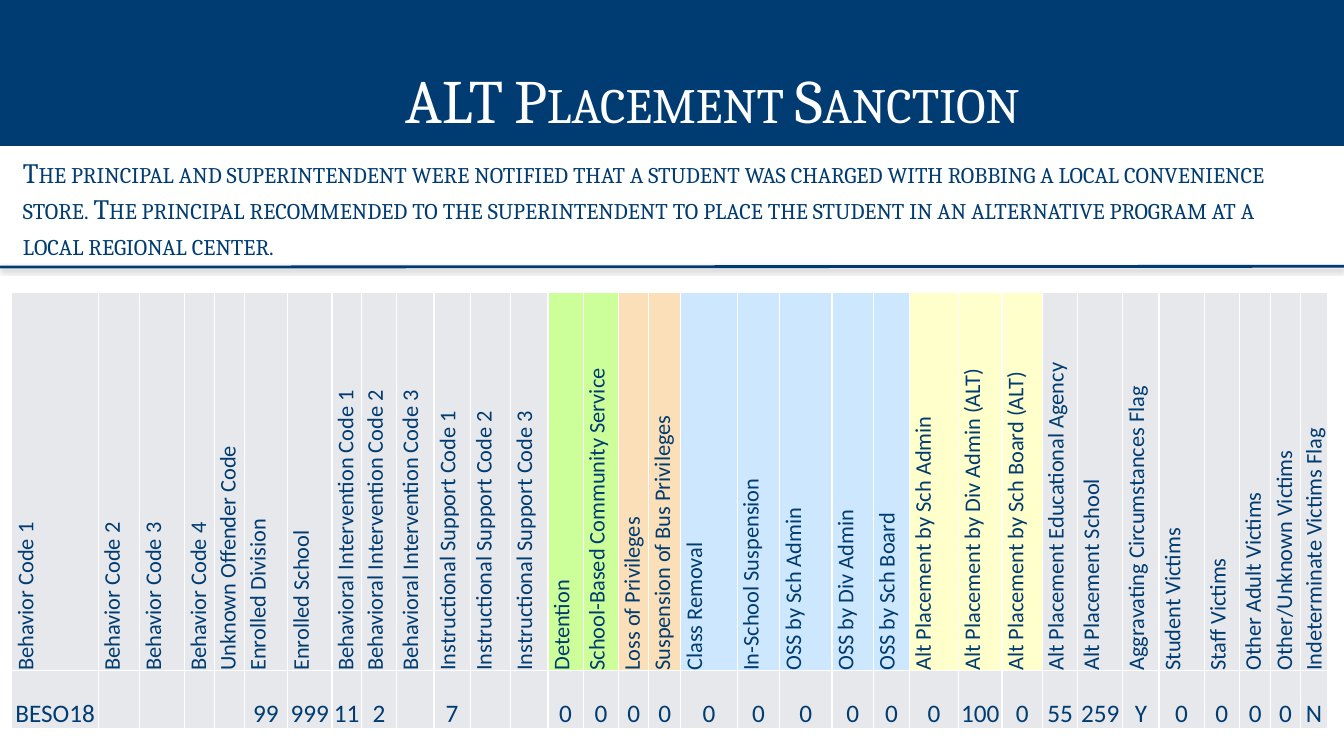
from lxml.etree import SubElement
from pptx import Presentation
from pptx.dml.color import RGBColor
from pptx.enum.shapes import MSO_CONNECTOR, MSO_SHAPE
from pptx.enum.text import MSO_ANCHOR, PP_ALIGN
from pptx.oxml import parse_xml
from pptx.oxml.ns import nsdecls, qn
from pptx.util import Cm, Pt

NAVY = RGBColor(0x00, 0x3C, 0x71)
WHITE = RGBColor(0xFF, 0xFF, 0xFF)
GREY = RGBColor(0xE7, 0xE8, 0xEB)
GREEN = RGBColor(0xCC, 0xFF, 0x99)
ORANGE = RGBColor(0xFA, 0xDF, 0xB8)
BLUE = RGBColor(0xCD, 0xE7, 0xFF)
YELLOW = RGBColor(0xFF, 0xFF, 0xCC)

WIDTH, HEIGHT = 33.87, 19.05
ROW_HEIGHTS = (9.53, 1.47)

SCENARIO = (
    "The principal and superintendent were notified that a student was charged "
    "with robbing a local convenience store. The principal recommended to the "
    "superintendent to place the student in an alternative program at a local "
    "regional center."
)

COLUMNS = [
    ("Behavior Code 1", "BESO18", 2.18, GREY),
    ("Behavior Code 2", "", 1.04, GREY),
    ("Behavior Code 3", "", 1.14, GREY),
    ("Behavior Code 4", "", 0.74, GREY),
    ("Unknown Offender Code", "", 0.76, GREY),
    ("Enrolled Division", "99", 1.09, GREY),
    ("Enrolled School", "999", 1.12, GREY),
    ("Behavioral Intervention Code 1", "11", 0.74, GREY),
    ("Behavioral Intervention Code 2", "2", 0.89, GREY),
    ("Behavioral Intervention Code 3", "", 0.94, GREY),
    ("Instructional Support Code 1", "7", 0.91, GREY),
    ("Instructional Support Code 2", "", 1.02, GREY),
    ("Instructional Support Code 3", "", 0.94, GREY),
    ("Detention", "0", 0.89, GREEN),
    ("School-Based Community Service", "0", 0.89, GREEN),
    ("Loss of Privileges", "0", 0.76, ORANGE),
    ("Suspension of Bus Privileges", "0", 0.81, ORANGE),
    ("Class Removal", "0", 1.42, BLUE),
    ("In-School Suspension", "0", 1.07, BLUE),
    ("OSS by Sch Admin", "0", 1.32, BLUE),
    ("OSS by Div Admin", "0", 1.04, BLUE),
    ("OSS by Sch Board", "0", 0.91, BLUE),
    ("Alt Placement by Sch Admin", "0", 1.24, YELLOW),
    ("Alt Placement by Div Admin (ALT)", "100", 1.09, YELLOW),
    ("Alt Placement by Sch Board (ALT)", "0", 1.02, YELLOW),
    ("Alt Placement Educational Agency", "55", 0.89, GREY),
    ("Alt Placement School", "259", 1.14, GREY),
    ("Aggravating Circumstances Flag", "Y", 0.91, GREY),
    ("Student Victims", "0", 1.14, GREY),
    ("Staff Victims", "0", 0.89, GREY),
    ("Other Adult Victims", "0", 0.79, GREY),
    ("Other/Unknown Victims", "0", 0.74, GREY),
    ("Indeterminate Victims Flag", "N", 0.69, GREY),
]


def set_attrs(obj, formats):
    for name, value in formats.items():
        setattr(obj, name, value)


def write_text(tf, text, font, color, para, small_caps=False):
    p = tf.paragraphs[0]
    set_attrs(p, para)
    r = p.add_run()
    r.text = text
    set_attrs(r.font, font)
    r.font.color.rgb = color
    if small_caps:
        r.font._element.set("cap", "small")


def set_frame(tf, left, top, right, bottom):
    set_attrs(tf, {
        "word_wrap": True,
        "vertical_anchor": MSO_ANCHOR.TOP,
        "margin_left": Cm(left),
        "margin_top": Cm(top),
        "margin_right": Cm(right),
        "margin_bottom": Cm(bottom),
    })


def add_title(s, text):
    sp = s.shapes.add_shape(MSO_SHAPE.RECTANGLE, 0, 0, Cm(WIDTH), Cm(3.68))
    sp.shadow.inherit = False
    sp.fill.solid()
    sp.fill.fore_color.rgb = NAVY
    sp.line.fill.background()
    set_frame(sp.text_frame, 2.29, 1.78, 0.25, 0.13)
    write_text(sp.text_frame, text, {"name": "Cambria", "size": Pt(44)}, WHITE,
               {"alignment": PP_ALIGN.CENTER, "line_spacing": 0.9}, True)


def add_scenario(s, text):
    sp = s.shapes.add_textbox(Cm(0.25), Cm(3.68), Cm(33.17), Cm(14.27))
    set_frame(sp.text_frame, 0.33, 0.18, 0.33, 0.18)
    write_text(sp.text_frame, text, {"name": "Cambria", "size": Pt(20)}, NAVY,
               {"line_spacing": 1.07, "space_after": Pt(8)}, True)


def add_divider(s):
    line = s.shapes.add_connector(MSO_CONNECTOR.STRAIGHT, 0, Cm(6.73), Cm(WIDTH), Cm(6.71))
    line.line.color.rgb = NAVY
    line.line.width = Pt(2)
    line._element.spPr.append(parse_xml(
        f'<a:effectLst {nsdecls("a")}>'
        f'<a:outerShdw blurRad="{Pt(3.1)}" dist="{Pt(1.6)}" dir="5400000" rotWithShape="0">'
        '<a:srgbClr val="000000"><a:alpha val="38000"/></a:srgbClr>'
        '</a:outerShdw></a:effectLst>'))


def add_borders(cell):
    tcPr = cell._tc.get_or_add_tcPr()
    for i, side in enumerate(("lnL", "lnR", "lnT", "lnB")):
        ln = SubElement(tcPr, qn(f"a:{side}"), w=str(Pt(1)))
        fill = SubElement(ln, qn("a:solidFill"))
        SubElement(fill, qn("a:srgbClr"), val=str(WHITE))
        tcPr.insert(i, ln)


def fill_cell(cell, text, size, color, align, vertical=False):
    set_attrs(cell, {
        "margin_left": 0, "margin_right": 0, "margin_top": 0, "margin_bottom": 0,
        "vertical_anchor": MSO_ANCHOR.BOTTOM,
    })
    cell.fill.solid()
    cell.fill.fore_color.rgb = color
    add_borders(cell)
    if vertical:
        cell._tc.get_or_add_tcPr().set("vert", "vert270")
    if text:
        write_text(cell.text_frame, text, {"name": "Calibri", "size": Pt(size)},
                   NAVY, {"alignment": align})


def add_sanctions(s):
    width = sum(column[2] for column in COLUMNS)
    table = s.shapes.add_table(2, len(COLUMNS), Cm(0.3), Cm(7.37),
                               Cm(width), Cm(sum(ROW_HEIGHTS))).table
    set_attrs(table, {"first_row": False, "horz_banding": False})
    for row, height in zip(table.rows, ROW_HEIGHTS):
        row.height = Cm(height)
    for i, (label, value, col_width, color) in enumerate(COLUMNS):
        table.columns[i].width = Cm(col_width)
        fill_cell(table.cell(0, i), label, 16, color, PP_ALIGN.JUSTIFY, True)
        fill_cell(table.cell(1, i), value, 18, GREY, PP_ALIGN.CENTER)


def main():
    prs = Presentation()
    set_attrs(prs, {"slide_width": Cm(WIDTH), "slide_height": Cm(HEIGHT)})
    s = prs.slides.add_slide(prs.slide_layouts[6])
    add_title(s, "ALT Placement Sanction")
    add_scenario(s, SCENARIO)
    add_divider(s)
    add_sanctions(s)
    prs.save("out.pptx")


if __name__ == "__main__":
    main()
